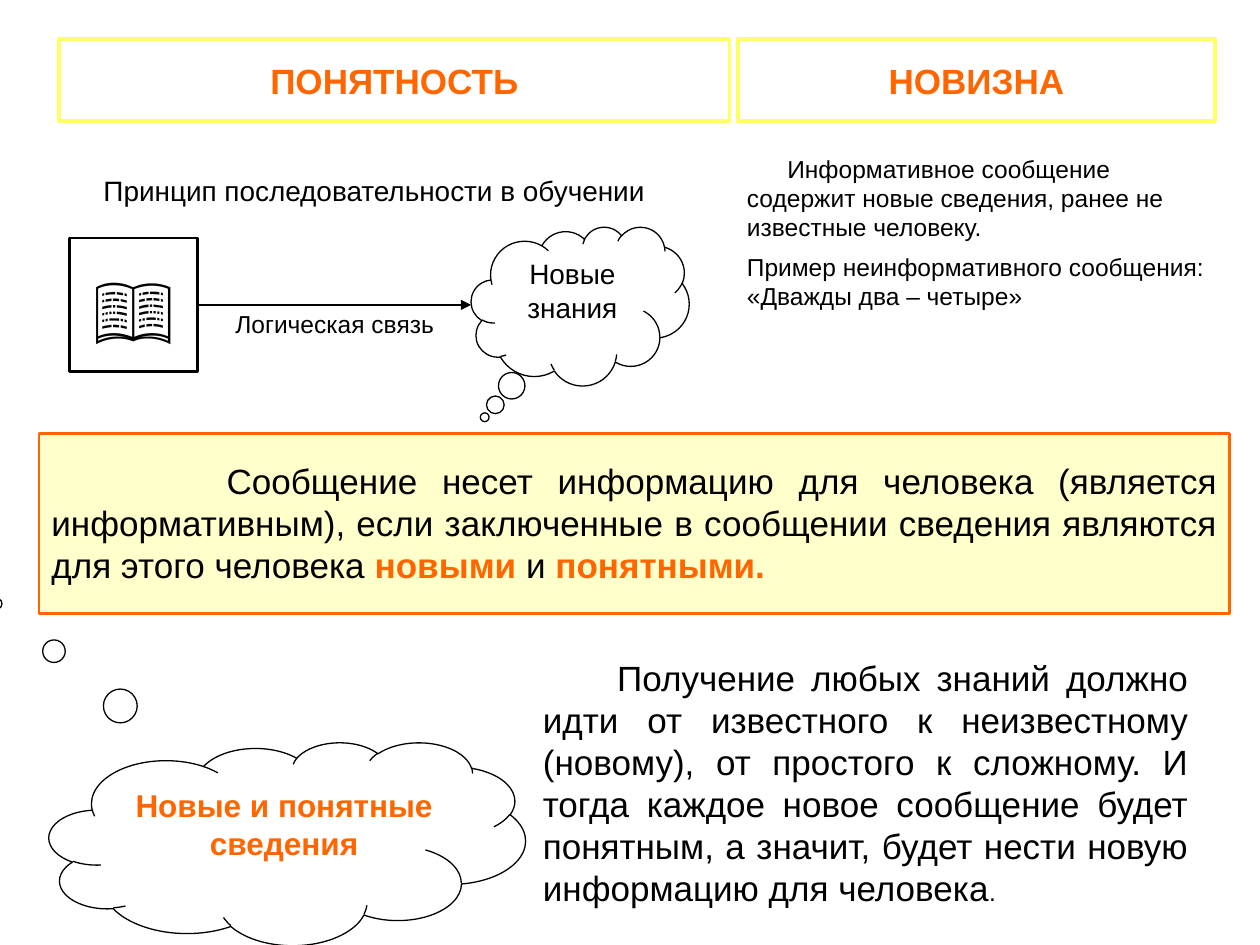
"""Build the slide on clear and new information in a message."""
import pptx
import pptx.dml.color
import pptx.enum.shapes
import pptx.enum.text
import pptx.oxml
import pptx.oxml.ns
import pptx.util
from pptx.util import Inches

SHAPES = pptx.enum.shapes.MSO_SHAPE
ALIGN = pptx.enum.text.PP_ALIGN
ANCHOR = pptx.enum.text.MSO_ANCHOR
BLACK, WHITE, ORANGE = "000000", "FFFFFF", "FF6600"
YELLOW, CREAM = "FFFF66", "FFFFCC"


def color(value):
    """Return the RGB colour of a hex string."""
    return pptx.dml.color.RGBColor.from_string(value)


class SlideBuilder:
    """Hold the style and the current slide."""

    font = "Arial"

    def __init__(self, slide):
        """Keep the slide to be filled."""
        self.slide = slide

    def place(self, shape, box):
        """Move a shape to left, top, width and height in inches."""
        shape.left, shape.top, shape.width, shape.height = map(Inches, box)

    def paint(self, shape, fill, line, width):
        """Set the fill and the outline of a shape."""
        shape.fill.solid()
        shape.fill.fore_color.rgb = color(fill)
        shape.line.color.rgb = color(line)
        shape.line.width = pptx.util.Pt(width)

    def set_text(self, shape, paragraphs, size, align=ALIGN.CENTER, anchor=ANCHOR.TOP,
                 ink=BLACK, bold=False, wrap=True, indent=0, gap=0):
        """Set paragraphs, each a string or a list of (text, highlighted) pairs."""
        frame = shape.text_frame
        frame.word_wrap = wrap
        frame.vertical_anchor = anchor
        for index, content in enumerate(paragraphs):
            paragraph = frame.add_paragraph() if index else frame.paragraphs[0]
            paragraph.alignment = align
            paragraph.space_before = paragraph.space_after = pptx.util.Pt(gap)
            paragraph.font.name = self.font
            paragraph.font.size = pptx.util.Pt(size)
            paragraph.font.bold = bold
            paragraph.font.color.rgb = color(ink)
            if indent and index == 0:
                paragraph._p.get_or_add_pPr().set("indent", str(Inches(indent)))
            parts = [(content, False)] if isinstance(content, str) else content
            for text, highlighted in parts:
                run = paragraph.add_run()
                run.text = text
                if highlighted:
                    run.font.bold = True
                    run.font.color.rgb = color(ORANGE)
        return frame

    def heading(self, shape, text):
        """Format a shape as a framed column heading."""
        self.paint(shape, WHITE, YELLOW, 2.25)
        self.set_text(shape, [text], 20, anchor=ANCHOR.MIDDLE, ink=ORANGE, bold=True)

    def title(self, box, text):
        """Use the title placeholder as a column heading."""
        self.place(self.slide.shapes.title, box)
        self.heading(self.slide.shapes.title, text)

    def shape(self, kind, box, fill=WHITE, line=BLACK, width=0.75, adjust=()):
        """Add a preset shape."""
        shape = self.slide.shapes.add_shape(kind, *map(Inches, box))
        shape.shadow.inherit = False
        self.paint(shape, fill, line, width)
        for index, value in enumerate(adjust):
            shape.adjustments[index] = value
        return shape

    def text(self, box, paragraphs, size, **style):
        """Add a text box."""
        label = self.slide.shapes.add_textbox(*map(Inches, box))
        return self.set_text(label, paragraphs, size, **style)

    def arrow(self, source, start, end):
        """Add an arrow from the right side of a rectangle."""
        arrow = self.slide.shapes.add_connector(
            pptx.enum.shapes.MSO_CONNECTOR.STRAIGHT, *map(Inches, start + end))
        arrow.begin_connect(source, 3)
        arrow.line.color.rgb = color(BLACK)
        arrow.line.width = pptx.util.Pt(1.5)
        namespace = pptx.oxml.ns.nsdecls("a")
        arrow.line._get_or_add_ln().append(
            pptx.oxml.parse_xml(f'<a:tailEnd {namespace} type="triangle"/>'))
        arrow._element.spPr.append(pptx.oxml.parse_xml(f"<a:effectLst {namespace}/>"))


def main():
    """Build and save the presentation."""
    deck = pptx.Presentation()
    deck.slide_width, deck.slide_height = Inches(10), Inches(7.5)
    builder = SlideBuilder(deck.slides.add_slide(deck.slide_layouts[5]))

    builder.title((0.47, 0.31, 5.32, 0.65), "ПОНЯТНОСТЬ")
    novelty = builder.shape(SHAPES.RECTANGLE, (5.86, 0.31, 3.78, 0.65))
    builder.heading(novelty, "НОВИЗНА")

    definition = builder.shape(
        SHAPES.RECTANGLE, (0.31, 3.44, 9.45, 1.43), CREAM, ORANGE, 1.5)
    frame = builder.set_text(definition, [[
        ("Сообщение несет информацию для человека (является информативным), если "
         "заключенные в сообщении сведения являются для этого человека ", False),
        ("новыми", True), (" и ", False), ("понятными.", True),
    ]], 20, align=ALIGN.JUSTIFY, indent=1.39)
    frame.margin_top = frame.margin_bottom = Inches(0.21)

    conclusion = builder.text((4.21, 5.16, 5.32, 2.12), [[
        ("Получение любых знаний должно идти от известного к неизвестному (новому), "
         "от простого к сложному. И тогда каждое новое сообщение будет понятным, "
         "а значит, будет нести новую информацию для человека", False), (".", False),
    ]], 20, align=ALIGN.JUSTIFY, indent=0.59)
    conclusion.paragraphs[0].runs[-1].font.size = pptx.util.Pt(14)

    builder.shape(SHAPES.CLOUD_CALLOUT, (0.39, 5.89, 3.78, 1.61), adjust=(-0.611, -1.183))
    builder.text((0.94, 6.19, 2.63, 0.9), ["Новые и понятные", "сведения"], 18,
                 ink=ORANGE, bold=True, wrap=False)

    builder.text((5.83, 1.17, 3.9, 1.97), [
        "Информативное сообщение содержит новые сведения, ранее не известные человеку.",
        "Пример неинформативного сообщения: «Дважды два – четыре»",
    ], 14, align=ALIGN.LEFT, indent=0.32, gap=2.8)

    builder.text((0.31, 1.17, 5.32, 0.68), ["Принцип последовательности в обучении"],
                 16, anchor=ANCHOR.MIDDLE)
    book = builder.shape(SHAPES.RECTANGLE, (0.55, 1.89, 1.02, 1.06), width=1.5)
    builder.set_text(book, ["📖"], 44, anchor=ANCHOR.MIDDLE, wrap=False)
    knowledge = builder.shape(
        SHAPES.CLOUD_CALLOUT, (3.74, 1.8, 1.73, 1.26), adjust=(-0.438, 0.7))
    builder.set_text(knowledge, ["Новые", "знания"], 16)
    builder.arrow(book, (1.57, 2.42), (3.74, 2.42))
    builder.text((1.77, 2.4, 1.93, 0.48), ["Логическая связь"], 14, align=ALIGN.LEFT)

    deck.save("out.pptx")


if __name__ == "__main__":
    main()
